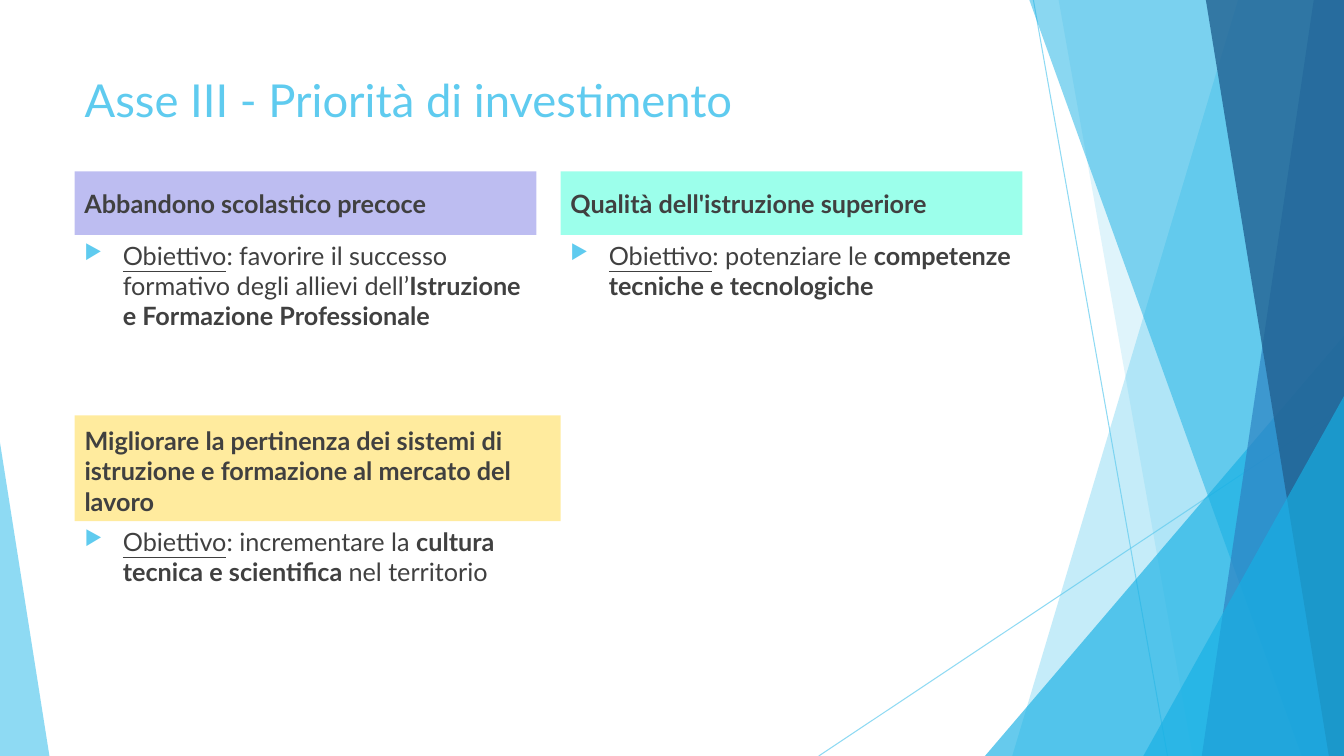
import typing
import pptx
import pptx.util
import pptx.dml.color
import pptx.enum.shapes
import pptx.enum.text
import pptx.oxml
import pptx.oxml.ns

RGB = pptx.dml.color.RGBColor
SHAPE = pptx.enum.shapes.MSO_SHAPE
ANCHOR = pptx.enum.text.MSO_ANCHOR
SKY = RGB(0x5F, 0xCB, 0xEF)
CYAN = RGB(0x17, 0xB0, 0xE4)
BLUE = RGB(0x2E, 0x83, 0xC3)
NAVY = RGB(0x22, 0x62, 0x92)
INK = RGB(0x40, 0x40, 0x40)
VIOLET = RGB(0x00, 0x00, 0xCC)
MINT = RGB(0x00, 0xFF, 0xCC)
AMBER = RGB(0xFF, 0xCC, 0x00)
FONT = "Lato"
WIDTH = pptx.util.Inches(13.33)
HEIGHT = pptx.util.Inches(7.5)
COLUMN = WIDTH / 100
ROW = HEIGHT / 100


class Box(typing.NamedTuple):
    left: float
    top: float
    width: float
    height: float

    def point(self, across, down):
        return (round((self.left + self.width * across / 100) * COLUMN),
                round((self.top + self.height * down / 100) * ROW))

    def frame(self):
        return (round(self.left * COLUMN), round(self.top * ROW),
                round(self.width * COLUMN), round(self.height * ROW))


def add_xml(parent, tag, **attributes):
    element = pptx.oxml.ns.qn(tag)
    child = parent.makeelement(element, attributes)
    parent.append(child)
    return child


def set_alpha(parent, percent):
    color = next(parent.iter(pptx.oxml.ns.qn("a:srgbClr")))
    add_xml(color, "a:alpha", val=str(percent * 1000))


def paint(shape, color, percent):
    shape.shadow.inherit = False
    shape.fill.solid()
    shape.fill.fore_color.rgb = color
    set_alpha(shape._element.spPr, percent)
    shape.line.fill.background()


def add_bullet(para):
    properties = para._p.get_or_add_pPr()
    indent = pptx.util.Inches(0.38)
    properties.set("marL", str(indent))
    properties.set("indent", str(-indent))
    add_xml(add_xml(properties, "a:buClr"), "a:srgbClr", val=str(SKY))
    add_xml(properties, "a:buSzPct", val="80000")
    add_xml(properties, "a:buChar", char="▶")


def write(shape, *spans, size=18, color=INK, anchor=ANCHOR.TOP, bullet=False):
    frame = shape.text_frame
    frame.word_wrap = True
    frame.auto_size = pptx.enum.text.MSO_AUTO_SIZE.NONE
    frame.vertical_anchor = anchor
    para = frame.paragraphs[0]
    para.alignment = pptx.enum.text.PP_ALIGN.LEFT
    para.space_before = pptx.util.Pt(0)
    if bullet:
        add_bullet(para)
    for text, style in spans:
        span = para.add_run()
        span.text = text
        span.font.name = FONT
        span.font.size = pptx.util.Pt(size)
        span.font.color.rgb = color
        span.font.bold = style == "bold"
        span.font.underline = style == "underline"


def add_thread(page, box, start, end):
    line = page.shapes.add_connector(
        pptx.enum.shapes.MSO_CONNECTOR.STRAIGHT, *box.point(*start), *box.point(*end))
    line.line.color.rgb = SKY
    line.line.width = pptx.util.Pt(0.75)
    set_alpha(line._element.spPr, 70)
    add_xml(line._element.spPr, "a:effectLst")


def add_band(page, box, top, bottom, color, percent):
    builder = page.shapes.build_freeform(*box.point(top, 0))
    builder.add_line_segments(
        [box.point(100, 0), box.point(100, 100), box.point(bottom, 100)], close=True)
    paint(builder.convert_to_shape(), color, percent)


def add_wedge(page, box, apex, color, percent):
    wedge = page.shapes.add_shape(SHAPE.ISOSCELES_TRIANGLE, *box.frame())
    wedge.adjustments[0] = apex
    paint(wedge, color, percent)


def add_facets(page, box):
    add_thread(page, box, (76.89, 0), (86.87, 100))
    add_thread(page, box, (100, 53.73), (60.92, 100))

    def wedge(left, top, width, apex, color, percent):
        part = Box(box.left + box.width * left / 100, box.top + box.height * top / 100,
                   box.width * width / 100, box.height * (100 - top) / 100)
        add_wedge(page, part, apex, color, percent)

    add_band(page, box, 92.12, 75.32, SKY, 36)
    add_band(page, box, 78.77, 88.75, SKY, 20)
    wedge(73.29, 44.4, 26.71, 1, CYAN, 66)
    add_band(page, box, 76.59, 96.85, CYAN, 50)
    add_band(page, box, 97.75, 89.42, BLUE, 70)
    add_band(page, box, 89.72, 98.87, NAVY, 80)
    wedge(85.07, 52.4, 14.93, 1, CYAN, 66)
    wedge(0, 58.53, 3.68, 0, SKY, 70)


def add_title(page, box, text):
    title = page.shapes.title
    title.left, title.top, title.width, title.height = box.frame()
    write(title, (text, "plain"), size=32.4, color=SKY)


def add_priority(page, box, heading, goal, header_rows, color, percent,
                 anchor=ANCHOR.MIDDLE):
    header = page.shapes.add_shape(
        SHAPE.RECTANGLE, *box._replace(height=header_rows).frame())
    paint(header, color, percent)
    write(header, (heading, "bold"), anchor=anchor)
    body = box._replace(top=box.top + header_rows, height=box.height - header_rows)
    write(page.shapes.add_textbox(*body.frame()),
          ("Obiettivo", "underline"), *goal, bullet=True)


def main():
    deck = pptx.Presentation()
    deck.slide_width, deck.slide_height = WIDTH, HEIGHT
    page = deck.slides.add_slide(deck.slide_layouts[5])
    left, card, gutter = 5.55, 34.36, 1.8
    pitch = card + gutter
    add_facets(page, Box(0, 0, 100, 100))
    add_title(page, Box(left, 8.93, pitch + card, 12), "Asse III - Priorità di investimento")
    add_priority(
        page, Box(left, 22.67, card, 28), "Abbandono scolastico precoce",
        [(": favorire il successo formativo degli allievi dell’", "plain"),
         ("Istruzione e Formazione Professionale", "bold")], 8.4, VIOLET, 26)
    add_priority(
        page, Box(left + pitch, 22.67, card, 28), "Qualità dell'istruzione superiore",
        [(": potenziare le ", "plain"),
         ("competenze tecniche e tecnologiche", "bold")], 8.4, MINT, 39)
    add_priority(
        page, Box(left, 54.93, pitch, 27.3),
        "Migliorare la pertinenza dei sistemi di istruzione e formazione "
        "al mercato del lavoro",
        [(": incrementare la ", "plain"), ("cultura tecnica e scientifica ", "bold"),
         ("nel territorio", "plain")], 14, AMBER, 38, anchor=ANCHOR.BOTTOM)
    deck.save("out.pptx")


if __name__ == "__main__":
    main()
